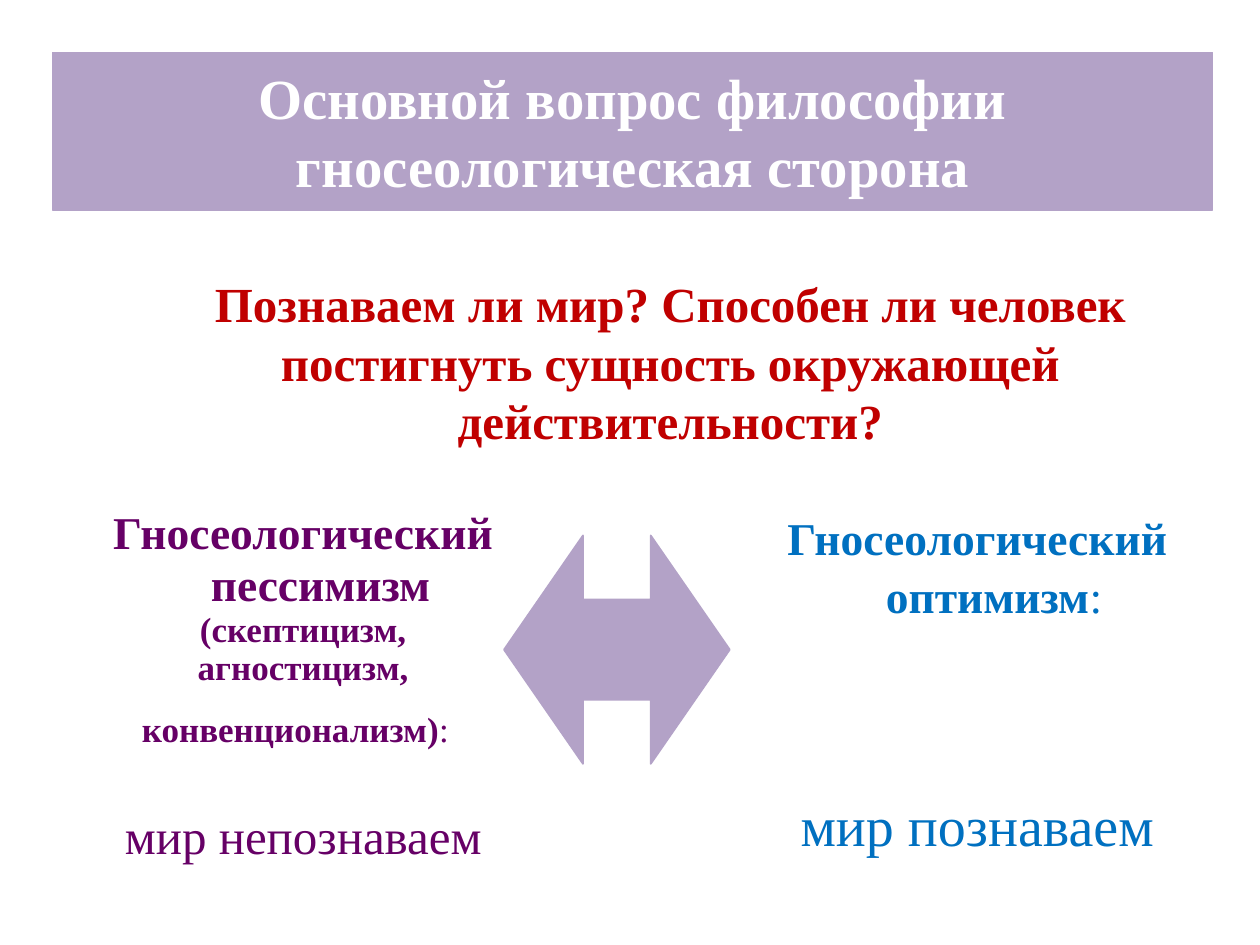
from pptx import Presentation
from pptx.dml.color import RGBColor
from pptx.enum import shapes, text
from pptx.util import Pt

LILAC = RGBColor(0xB3, 0xA2, 0xC7)
WHITE = RGBColor(0xFF, 0xFF, 0xFF)
RED = RGBColor(0xC0, 0x00, 0x00)
PURPLE = RGBColor(0x66, 0x00, 0x66)
BLUE = RGBColor(0x00, 0x70, 0xC0)
FONT = "Times New Roman"
HANGING = Pt(27)


def add_run(paragraph, words, size, color, bold):
    run = paragraph.add_run()
    run.text = words
    run.font.name = FONT
    run.font.size = Pt(size)
    run.font.bold = bold
    run.font.color.rgb = color


def paint(shape, line_width):
    """Give a shape the lilac fill and outline."""
    shape.fill.solid()
    shape.fill.fore_color.rgb = LILAC
    shape.line.color.rgb = LILAC
    shape.line.width = Pt(line_width)


presentation = Presentation()
presentation.slide_width = Pt(720)
presentation.slide_height = Pt(540)
slide = presentation.slides.add_slide(presentation.slide_layouts[5])

# Title band
title = slide.shapes.title
title.left, title.top, title.width, title.height = Pt(30), Pt(30), Pt(663), Pt(90)
paint(title, 0.75)
title.text_frame.word_wrap = True
title.text_frame.auto_size = text.MSO_AUTO_SIZE.NONE
title.text_frame.vertical_anchor = text.MSO_ANCHOR.MIDDLE
heading = title.text_frame.paragraphs[0]
heading.alignment = text.PP_ALIGN.CENTER
add_run(heading, "Основной вопрос философии гносеологическая сторона", 32.4, WHITE, True)

# Two opposing answers: box, colour, then paragraphs of (space before, runs)
answers = [
    ((426, 291.6, 265, 227.5), BLUE, [
        (0, [("Гносеологический оптимизм", 26, True), (":", 26, False), (" ", 32, False)]),
        (98.5, [("мир познаваем", 32, False)]),
    ]),
    ((30, 288, 286.5, 224), PURPLE, [
        (0, [("Гносеологический пессимизм", 26, True), (" ", 28, True)]),
        (0, [("(скептицизм,", 20, True)]),
        (0, [("агностицизм,", 20, True)]),
        (0, [("конвенционализм)", 20, True), (":", 20, False), (" ", 36, False)]),
        (32, [("мир непознаваем", 28, False)]),
    ]),
]
for box, color, paragraphs in answers:
    text_frame = slide.shapes.add_textbox(*map(Pt, box)).text_frame
    text_frame.word_wrap = True
    for index, (space_before, runs) in enumerate(paragraphs):
        paragraph = text_frame.add_paragraph() if index else text_frame.paragraphs[0]
        properties = paragraph._p.get_or_add_pPr()
        properties.set("marL", str(HANGING))
        properties.set("indent", str(-HANGING))
        paragraph.alignment = text.PP_ALIGN.CENTER
        paragraph.line_spacing = 0.9
        paragraph.space_before = Pt(space_before)
        for words, size, bold in runs:
            add_run(paragraph, words, size, color, bold)

# Central question
question = slide.shapes.add_textbox(Pt(75), Pt(152.6), Pt(616), Pt(108)).text_frame
question.word_wrap = True
question.auto_size = text.MSO_AUTO_SIZE.SHAPE_TO_FIT_TEXT
question.paragraphs[0].alignment = text.PP_ALIGN.CENTER
add_run(
    question.paragraphs[0],
    "Познаваем ли мир? Способен ли человек постигнуть сущность окружающей действительности?",
    28, RED, True,
)

# Arrow between the answers
arrow = slide.shapes.add_shape(
    shapes.MSO_SHAPE.LEFT_RIGHT_ARROW, Pt(288), Pt(306), Pt(129), Pt(130.5))
arrow.adjustments[0] = 0.44
arrow.adjustments[1] = 0.35
arrow.shadow.inherit = False
paint(arrow, 1)

presentation.save("out.pptx")
